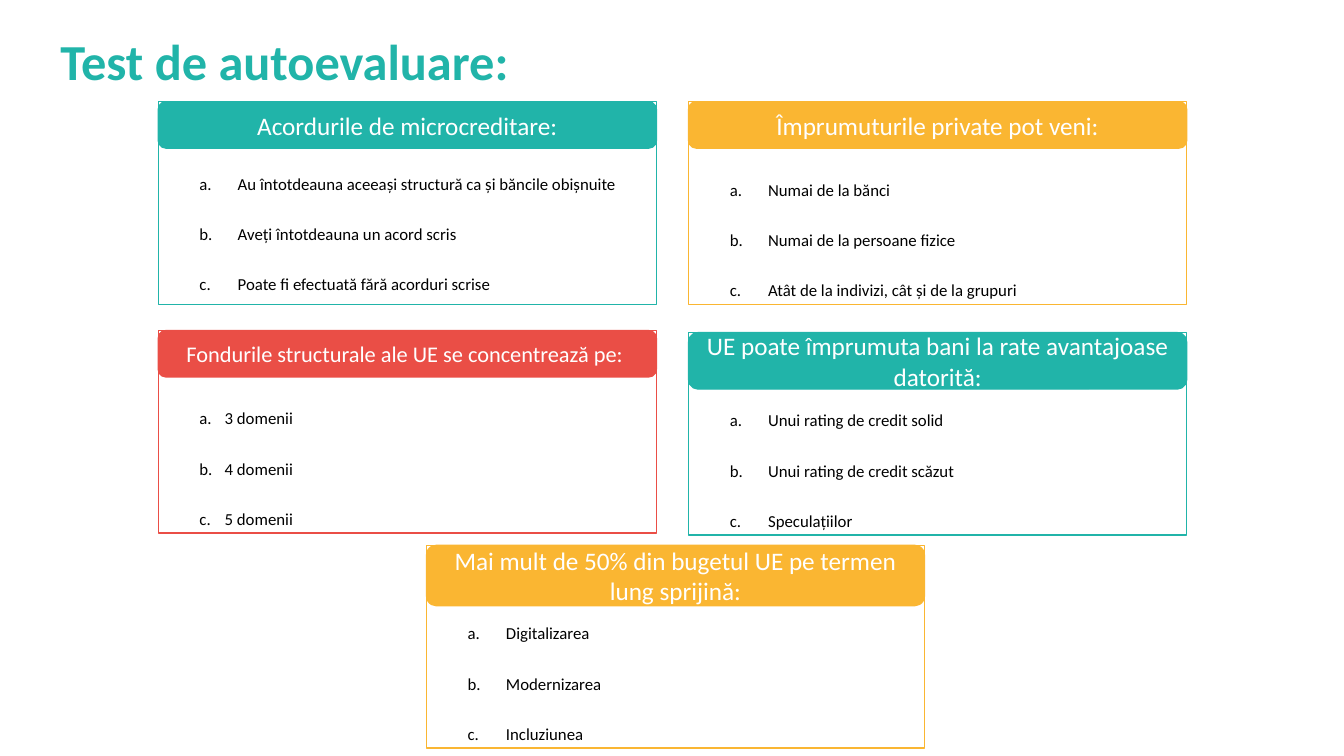
from lxml import etree
from pptx import Presentation
from pptx.dml.color import RGBColor
from pptx.enum.shapes import MSO_SHAPE
from pptx.enum.text import MSO_ANCHOR, MSO_AUTO_SIZE, PP_ALIGN
from pptx.oxml.ns import qn
from pptx.util import Inches, Pt

RECT, ROUND = MSO_SHAPE.RECTANGLE, MSO_SHAPE.ROUNDED_RECTANGLE
MIDDLE, NO_FIT = MSO_ANCHOR.MIDDLE, MSO_AUTO_SIZE.NONE
LEFT, CENTER = PP_ALIGN.LEFT, PP_ALIGN.CENTER

THEME = {
    "font": "Calibri",
    "teal": RGBColor(0x21, 0xB4, 0xA9),
    "amber": RGBColor(0xFA, 0xB6, 0x32),
    "red": RGBColor(0xEA, 0x4E, 0x46),
    "white": RGBColor(0xFF, 0xFF, 0xFF),
    "black": RGBColor(0, 0, 0),
    "title": 36, "heading": 18, "small_heading": 16, "answer": 12,
}

# Card grid, in inches
CARD_W, CARD_H = 4.94, 2.01
COL_1, COL_2, COL_MID = 1.57, 6.83, 4.23
ROW_1, ROW_2, ROW_3 = 1.01, 3.28, 5.41
LIST_DX, LIST_DY, LIST_H = 0.31, 0.42, 1.55

# left, top, colour, heading height, heading size, heading, list dy, indent, answers
CARDS = [
    (COL_1, ROW_1, "teal", 0.46, "heading", "Acordurile de microcreditare:", 0.36, 0.38,
     ["Au întotdeauna aceeași structură ca și băncile obișnuite",
      "Aveți întotdeauna un acord scris",
      "Poate fi efectuată fără acorduri scrise"]),
    (COL_2, ROW_1, "amber", 0.46, "heading", "Împrumuturile private pot veni:", LIST_DY, 0.38,
     ["Numai de la bănci", "Numai de la persoane fizice",
      "Atât de la indivizi, cât și de la grupuri"]),
    (COL_1, ROW_2, "red", 0.46, "small_heading",
     "Fondurile structurale ale UE se concentrează pe: ", LIST_DY, 0.25,
     ["3 domenii", "4 domenii", "5 domenii"]),
    (COL_2, ROW_2 + 0.02, "teal", 0.56, "heading",
     "UE poate împrumuta bani la rate avantajoase datorită:", LIST_DY, 0.38,
     ["Unui rating de credit solid", "Unui rating de credit scăzut", "Speculațiilor"]),
    (COL_MID, ROW_3, "amber", 0.6, "heading",
     "Mai mult de 50% din bugetul UE pe termen lung sprijină:", LIST_DY, 0.38,
     ["Digitalizarea", "Modernizarea", "Incluziunea"]),
]


def add_run(p, text, size, color, bold=False):
    r = p.add_run()
    r.text = text
    r.font.name = THEME["font"]
    r.font.size = Pt(THEME[size])
    r.font.color.rgb = THEME[color]
    r.font.bold = bold


def add_box(shapes, kind, left, top, height, color):
    """Add a card-wide shape outlined in the card colour."""
    box = shapes.add_shape(kind, Inches(left), Inches(top), Inches(CARD_W), Inches(height))
    box.shadow.inherit = False
    box.line.color.rgb = THEME[color]
    box.line.width = Pt(1)
    return box


prs = Presentation()
prs.slide_width, prs.slide_height = Inches(13.33), Inches(7.5)
s = prs.slides.add_slide(prs.slide_layouts.get_by_name("Title Only"))

title = s.shapes.title
title.left, title.top, title.width, title.height = map(Inches, (0.6, 0.29, 9.02, 0.61))
tf = title.text_frame
tf.margin_left = tf.margin_right = tf.margin_top = tf.margin_bottom = 0
tf.vertical_anchor, tf.auto_size = MIDDLE, NO_FIT
tf.paragraphs[0].alignment = LEFT
add_run(tf.paragraphs[0], "Test de autoevaluare:", "title", "teal", bold=True)

for left, top, color, head_h, head_size, heading, list_dy, indent, answers in CARDS:
    card = s.shapes.add_group_shape()

    frame = add_box(card.shapes, RECT, left, top, CARD_H, color)
    frame.fill.background()

    header = add_box(card.shapes, ROUND, left, top, head_h, color)
    header.fill.solid()
    header.fill.fore_color.rgb = THEME[color]
    tf = header.text_frame
    tf.word_wrap, tf.vertical_anchor = True, MIDDLE
    tf.paragraphs[0].alignment = CENTER
    add_run(tf.paragraphs[0], heading, head_size, "white")

    answer_list = card.shapes.add_textbox(
        Inches(left + LIST_DX), Inches(top + list_dy),
        Inches(CARD_W - LIST_DX), Inches(LIST_H))
    tf = answer_list.text_frame
    tf.word_wrap = True
    for i, answer in enumerate(answers):
        p = tf.add_paragraph() if i else tf.paragraphs[0]
        p.line_spacing = Pt(36)
        pPr = p._p.get_or_add_pPr()
        pPr.set("marL", str(Inches(indent)))
        pPr.set("indent", str(-Inches(indent)))
        etree.SubElement(pPr, qn("a:buFont"), typeface=THEME["font"])
        etree.SubElement(pPr, qn("a:buAutoNum"), type="alphaLcPeriod")
        add_run(p, answer, "answer", "black")

prs.save("out.pptx")
